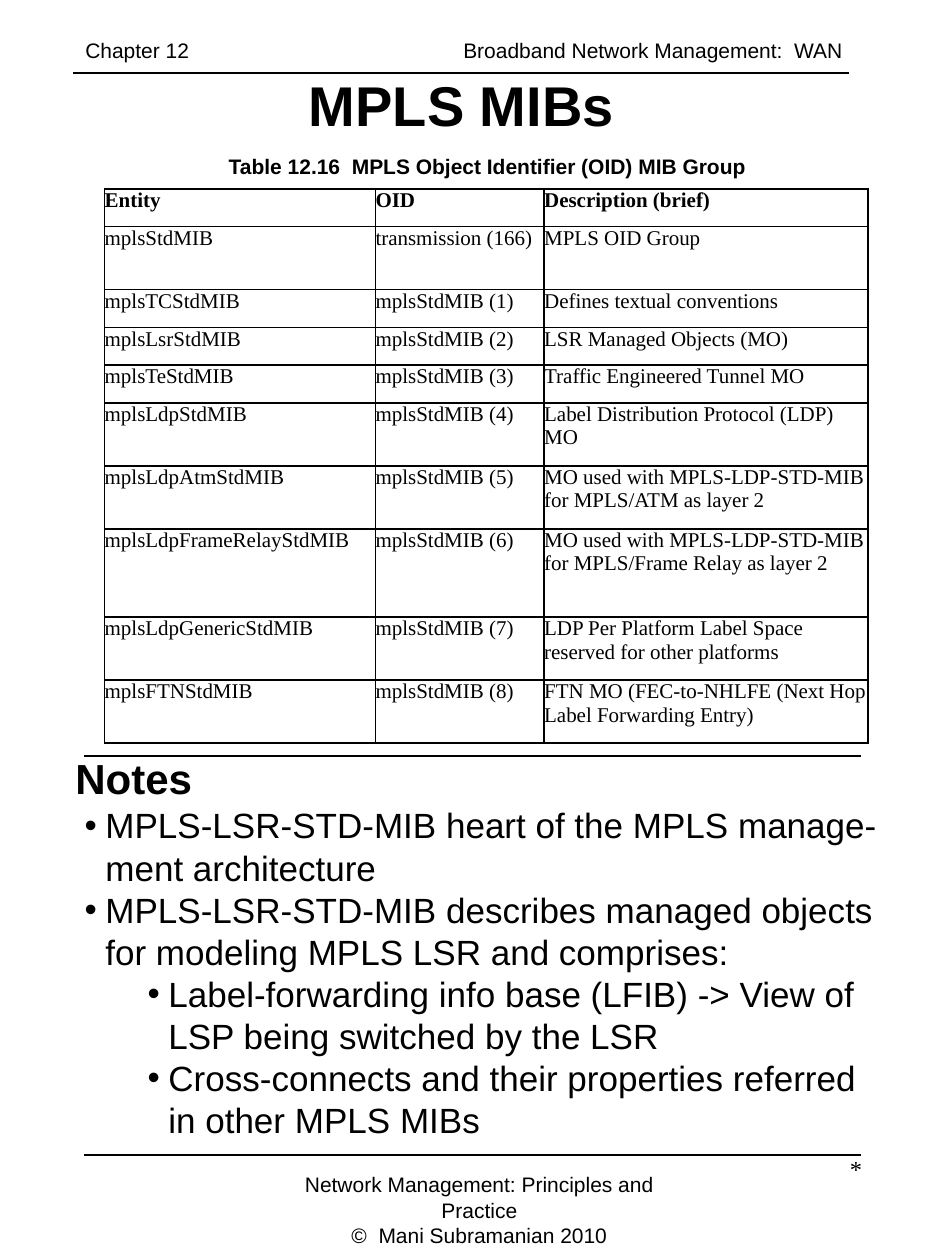
from dataclasses import dataclass

from lxml import etree
from pptx import Presentation
from pptx.dml.color import RGBColor
from pptx.enum.shapes import MSO_CONNECTOR
from pptx.enum.text import MSO_ANCHOR, MSO_AUTO_SIZE, PP_ALIGN
from pptx.oxml.ns import qn
from pptx.util import Cm, Pt

LEFT, CENTER, RIGHT = PP_ALIGN.LEFT, PP_ALIGN.CENTER, PP_ALIGN.RIGHT
MIDDLE, TOP = MSO_ANCHOR.MIDDLE, MSO_ANCHOR.TOP
NO_FIT = MSO_AUTO_SIZE.NONE
STRAIGHT = MSO_CONNECTOR.STRAIGHT
SANS, SERIF = "Arial", "Times New Roman"
BLACK = "000000"


@dataclass
class Box:
    x: float
    y: float
    w: float
    h: float


@dataclass
class Label:
    box: Box
    lines: list[str]
    size: float = 12
    bold: bool = False
    align: PP_ALIGN = LEFT
    font: str = SANS
    spacing: float | None = None


@dataclass
class Bullet:
    lines: list[str]
    level: int = 0


@dataclass
class Rule:
    x: float
    y: float


@dataclass
class Row:
    height: float
    cells: list[str]


RULE_WIDTH = 15.65
RULES = [Rule(1.47, 1.47), Rule(1.7, 15.24), Rule(1.7, 23.29)]

TITLE = Label(Box(1.47, 1.47, 15.67, 1.27), ["MPLS MIBs"], 32, True, CENTER)
HEADER = Label(Box(1.47, 0.64, 15.93, 0.76),
               ["Chapter 12\tBroadband Network Management:  WAN"])
LABELS = [
    Label(Box(2.11, 2.97, 15.44, 0.76),
          ["Table 12.16  MPLS Object Identifier (OID) MIB Group"], 12, True, CENTER),
    Label(Box(1.27, 15.04, 2.97, 1.27), ["Notes"], 24, True),
    Label(Box(5.08, 23.5, 9.17, 1.27),
          ["Network Management: Principles and Practice", "©  Mani Subramanian 2010"],
          align=CENTER, spacing=14.4),
    Label(Box(13.67, 23.14, 3.96, 1.7), ["*"], 14, align=RIGHT, font=SERIF),
]

NOTES_BOX = Box(1.45, 16.08, 16.76, 7.09)
NOTES = [
    Bullet(["MPLS-LSR-STD-MIB heart of the MPLS manage-", "ment architecture"]),
    Bullet(["MPLS-LSR-STD-MIB describes managed objects",
            "for modeling MPLS LSR and comprises:"]),
    Bullet(["Label-forwarding info base (LFIB) -> View of",
            "LSP being switched by the LSR"], 1),
    Bullet(["Cross-connects and their properties referred", "in other MPLS MIBs"], 1),
]

COLUMNS = [5.46, 3.4, 6.53]
SHORT, MEDIUM, TALL = 0.76, 1.27, 1.78
ROWS = [
    Row(SHORT, ["Entity", "OID", "Description (brief)"]),
    Row(MEDIUM, ["mplsStdMIB", "transmission (166)", "MPLS OID Group"]),
] + [
    Row(height, [entity, f"mplsStdMIB ({number})", description])
    for number, (height, entity, description) in enumerate([
        (SHORT, "mplsTCStdMIB", "Defines textual conventions"),
        (SHORT, "mplsLsrStdMIB", "LSR Managed Objects (MO)"),
        (SHORT, "mplsTeStdMIB", "Traffic Engineered Tunnel MO"),
        (MEDIUM, "mplsLdpStdMIB", "Label Distribution Protocol (LDP) MO"),
        (MEDIUM, "mplsLdpAtmStdMIB",
         "MO used with MPLS-LDP-STD-MIB for MPLS/ATM as layer 2"),
        (TALL, "mplsLdpFrameRelayStdMIB",
         "MO used with MPLS-LDP-STD-MIB for MPLS/Frame Relay as layer 2"),
        (MEDIUM, "mplsLdpGenericStdMIB",
         "LDP Per Platform Label Space reserved for other platforms"),
        (MEDIUM, "mplsFTNStdMIB",
         "FTN MO (FEC-to-NHLFE (Next Hop Label Forwarding Entry)"),
    ], start=1)
]


def color(value: str) -> RGBColor:
    return RGBColor.from_string(value)


def add_run(p, text: str, size: float, bold: bool = False, font: str = SANS) -> None:
    r = p.add_run()
    r.text = text
    r.font.name, r.font.size, r.font.bold = font, Pt(size), bold
    r.font.color.rgb = color(BLACK)


def place(sp, box: Box, anchor: MSO_ANCHOR = TOP):
    sp.left, sp.top, sp.width, sp.height = Cm(box.x), Cm(box.y), Cm(box.w), Cm(box.h)
    tf = sp.text_frame
    tf.word_wrap, tf.auto_size, tf.vertical_anchor = True, NO_FIT, anchor
    return tf


def write_label(tf, label: Label) -> None:
    for i, line in enumerate(label.lines):
        p = tf.add_paragraph() if i else tf.paragraphs[0]
        p.alignment = label.align
        if label.spacing:
            p.line_spacing = Pt(label.spacing)
        add_run(p, line, label.size, label.bold, label.font)


def add_label(s, label: Label):
    sp = s.shapes.add_textbox(0, 0, 0, 0)
    write_label(place(sp, label.box), label)
    return sp


def add_rule(s, rule: Rule) -> None:
    line = s.shapes.add_connector(STRAIGHT, Cm(rule.x), Cm(rule.y),
                                  Cm(rule.x + RULE_WIDTH), Cm(rule.y))
    line.line.color.rgb = color(BLACK)
    line.line.width = Pt(1)
    etree.SubElement(line._element.spPr, qn("a:effectLst"))


def write_bullet(p, bullet: Bullet) -> None:
    p.level = bullet.level
    p.alignment = LEFT
    p.line_spacing, p.space_before = Pt(24), Pt(0)
    pPr = p._p.get_or_add_pPr()
    hang = Cm(0.42)
    pPr.set("marL", str(hang + bullet.level * Cm(1.27)))
    pPr.set("indent", str(-hang))
    clr = etree.SubElement(pPr, qn("a:buClr"))
    etree.SubElement(clr, qn("a:srgbClr"), val=BLACK)
    etree.SubElement(pPr, qn("a:buFont"), typeface=SANS)
    etree.SubElement(pPr, qn("a:buChar"), char="•")
    for i, line in enumerate(bullet.lines):
        if i:
            p.add_line_break()
        add_run(p, line, 20)


def border_cell(cell) -> None:
    tcPr = cell._tc.get_or_add_tcPr()
    for side in ("lnL", "lnR", "lnT", "lnB"):
        ln = etree.SubElement(tcPr, qn(f"a:{side}"), w=str(Pt(1)))
        fill = etree.SubElement(ln, qn("a:solidFill"))
        etree.SubElement(fill, qn("a:srgbClr"), val=BLACK)


def add_oid_table(s) -> None:
    table = s.shapes.add_table(len(ROWS), len(COLUMNS), Cm(2.11), Cm(3.81),
                               Cm(sum(COLUMNS)), Cm(sum(r.height for r in ROWS))).table
    table.first_row = table.horz_banding = False
    for column, width in zip(table.columns, COLUMNS):
        column.width = Cm(width)
    for i, row in enumerate(ROWS):
        table.rows[i].height = Cm(row.height)
        for j, text in enumerate(row.cells):
            cell = table.cell(i, j)
            cell.margin_left = cell.margin_right = 0
            cell.margin_top = cell.margin_bottom = 0
            border_cell(cell)
            cell.fill.background()
            add_run(cell.text_frame.paragraphs[0], text, 12, i == 0, SERIF)


def main() -> None:
    prs = Presentation()
    prs.slide_width, prs.slide_height = Cm(19.05), Cm(25.4)
    s = prs.slides.add_slide(prs.slide_layouts[1])

    # Title and running header
    write_label(place(s.shapes.title, TITLE.box, MIDDLE), TITLE)
    header = add_label(s, HEADER)
    pPr = header.text_frame.paragraphs[0]._p.get_or_add_pPr()
    tabs = etree.SubElement(pPr, qn("a:tabLst"))
    etree.SubElement(tabs, qn("a:tab"), pos=str(Cm(7.62)), algn="l")

    # Notes list
    tf = place(s.placeholders[1], NOTES_BOX)
    for i, bullet in enumerate(NOTES):
        write_bullet(tf.add_paragraph() if i else tf.paragraphs[0], bullet)

    # Table, captions, footer and rules
    add_oid_table(s)
    for label in LABELS:
        add_label(s, label)
    for rule in RULES:
        add_rule(s, rule)
    prs.save("out.pptx")


if __name__ == "__main__":
    main()
